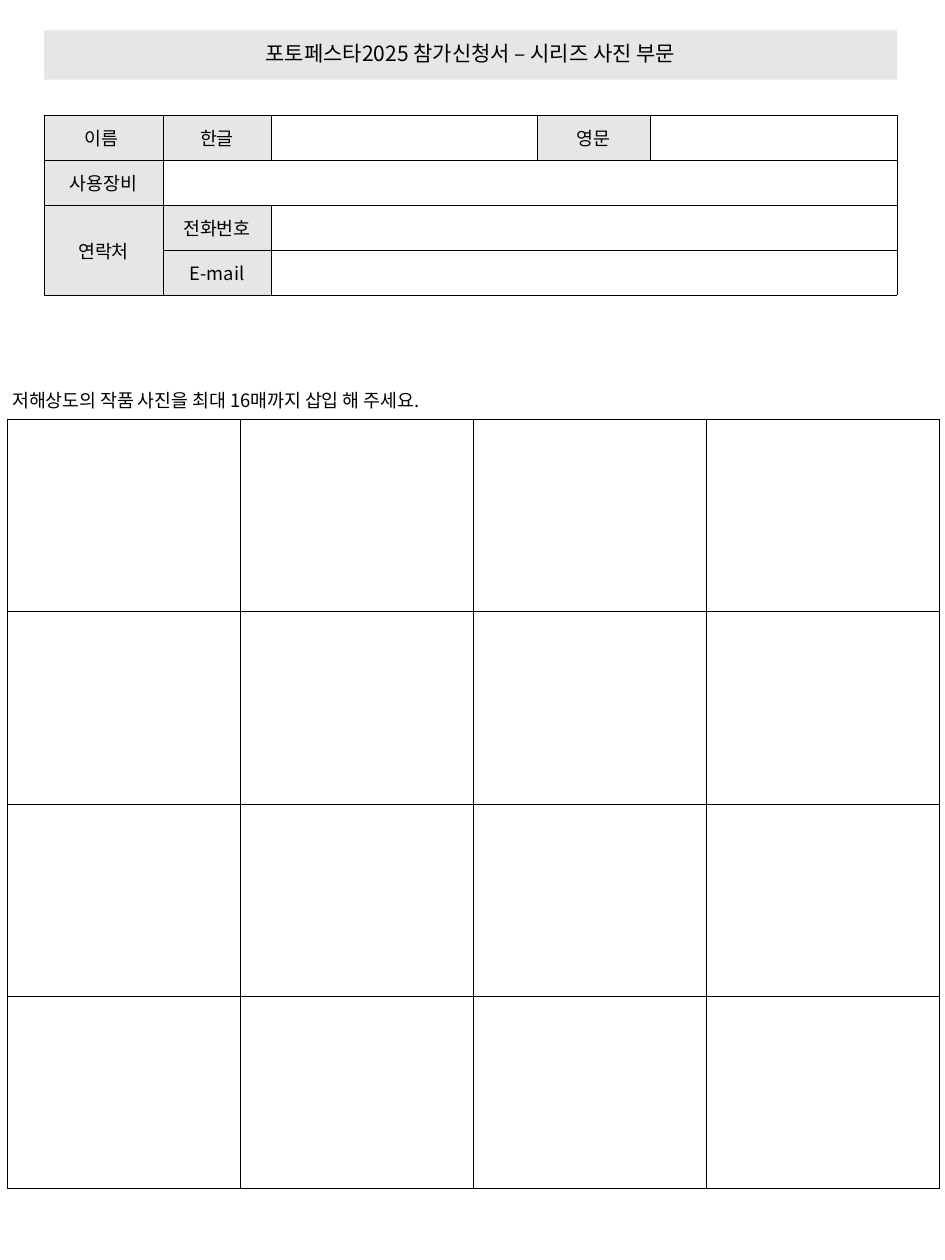
from dataclasses import dataclass

from lxml.etree import SubElement
from pptx import Presentation
from pptx.dml.color import RGBColor
from pptx.enum.shapes import MSO_SHAPE
from pptx.enum.text import MSO_ANCHOR, MSO_AUTO_SIZE, PP_ALIGN
from pptx.oxml.ns import qn
from pptx.util import Pt

GRAY = RGBColor(0xE7, 0xE6, 0xE6)
BLACK = RGBColor(0, 0, 0)
FONT = "Noto Sans CJK KR"
SIZE = 10.5
LINE = 0.25


@dataclass
class Grid:
    left: float
    top: float
    cols: list[float]
    rows: list[float]


@dataclass
class Label:
    row: int
    col: int
    text: str


@dataclass
class Span:
    row: int
    col: int
    last_row: int
    last_col: int


FORM = Grid(25.2, 65.7, [68, 61.7, 152, 64.6, 141.1], [25.75] * 4)
PHOTOS = Grid(4.2, 239.3, [133.2] * 4, [110] * 4)

LABELS = [
    Label(0, 0, "이름 "),
    Label(0, 1, "한글"),
    Label(0, 3, "영문"),
    Label(1, 0, "사용장비"),
    Label(2, 0, "연락처"),
    Label(2, 1, "전화번호"),
    Label(3, 1, "E-mail"),
]
SPANS = [Span(1, 1, 1, 4), Span(2, 0, 3, 0), Span(2, 2, 2, 4), Span(3, 2, 3, 4)]


def add_text(para, text: str, size: float = SIZE) -> None:
    run = para.add_run()
    run.text = text
    run.font.size = Pt(size)
    run.font.name = FONT
    run.font.color.rgb = BLACK
    SubElement(run.font._element, qn("a:ea"), typeface=FONT)


def add_lines(cell) -> None:
    props = cell._tc.get_or_add_tcPr()
    for side in ("lnL", "lnR", "lnT", "lnB"):
        line = SubElement(props, qn(f"a:{side}"), w=str(int(Pt(LINE))))
        fill = SubElement(line, qn("a:solidFill"))
        SubElement(fill, qn("a:srgbClr"), val=str(BLACK))


def add_grid(slide, grid: Grid, labels: list[Label], spans: list[Span]) -> None:
    frame = slide.shapes.add_table(
        len(grid.rows), len(grid.cols), Pt(grid.left), Pt(grid.top),
        Pt(sum(grid.cols)), Pt(sum(grid.rows)))
    table = frame.table
    table.first_row = table.horz_banding = False
    for col, width in zip(table.columns, grid.cols):
        col.width = Pt(width)
    for row, height in zip(table.rows, grid.rows):
        row.height = Pt(height)

    # Borders, and a small text size so that empty rows keep their height
    texts = {(label.row, label.col): label.text for label in labels}
    for r in range(len(grid.rows)):
        for c in range(len(grid.cols)):
            cell = table.cell(r, c)
            add_lines(cell)
            para = cell.text_frame.paragraphs[0]
            if (r, c) in texts:
                cell.fill.solid()
                cell.fill.fore_color.rgb = GRAY
                cell.vertical_anchor = MSO_ANCHOR.MIDDLE
                para.alignment = PP_ALIGN.CENTER
                add_text(para, texts[r, c])
            else:
                cell.fill.background()
                SubElement(para._p, qn("a:endParaRPr"), sz=str(int(SIZE * 100)))

    for span in spans:
        table.cell(span.row, span.col).merge(
            table.cell(span.last_row, span.last_col))


def add_title(slide, text: str) -> None:
    bar = slide.shapes.add_shape(
        MSO_SHAPE.RECTANGLE, Pt(25.2), Pt(17.3), Pt(487.4), Pt(28.2))
    bar.shadow.inherit = False
    bar.fill.solid()
    bar.fill.fore_color.rgb = GRAY
    bar.line.fill.background()
    bar.text_frame.word_wrap = True
    bar.text_frame.vertical_anchor = MSO_ANCHOR.MIDDLE
    para = bar.text_frame.paragraphs[0]
    para.alignment = PP_ALIGN.CENTER
    para.line_spacing = 0.9
    add_text(para, text, 12)


def add_note(slide, text: str) -> None:
    box = slide.shapes.add_textbox(Pt(0), Pt(218.9), Pt(557.3), Pt(20.9))
    box.text_frame.word_wrap = True
    box.text_frame.auto_size = MSO_AUTO_SIZE.SHAPE_TO_FIT_TEXT
    add_text(box.text_frame.paragraphs[0], text)


def main() -> None:
    deck = Presentation()
    deck.slide_width, deck.slide_height = Pt(540), Pt(720)
    slide = deck.slides.add_slide(deck.slide_layouts[6])

    # Photo grid, then the entry form
    add_grid(slide, PHOTOS, [], [])
    add_grid(slide, FORM, LABELS, SPANS)

    # Note above the photos, and the title bar
    add_note(slide, "저해상도의 작품 사진을 최대 16매까지 삽입 해 주세요.")
    add_title(slide, "포토페스타2025 참가신청서 – 시리즈 사진 부문")

    deck.save("out.pptx")


if __name__ == "__main__":
    main()
